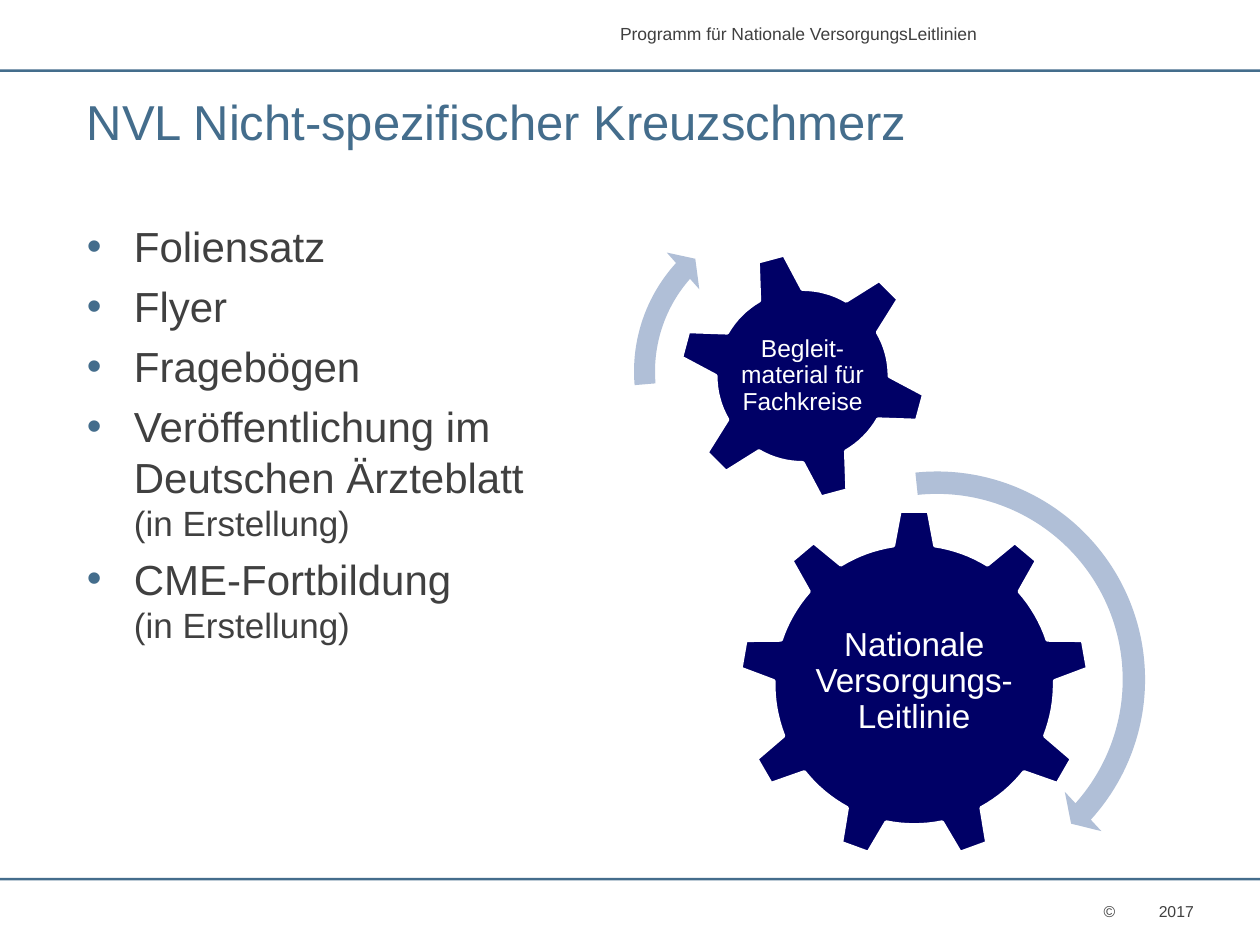
import math
import pptx
import pptx.util
import pptx.dml.color
import pptx.enum.shapes
import pptx.enum.text
import pptx.oxml
import pptx.oxml.ns

Cm = pptx.util.Cm
Pt = pptx.util.Pt
RGB = pptx.dml.color.RGBColor
SHAPE = pptx.enum.shapes.MSO_SHAPE
ALIGN = pptx.enum.text.PP_ALIGN
ANCHOR = pptx.enum.text.MSO_ANCHOR
SPACE = pptx.oxml.ns.nsdecls("a")

STEEL = RGB(0x44, 0x6D, 0x8C)
GREY = RGB(0x40, 0x40, 0x40)
NAVY = RGB(0x00, 0x00, 0x66)
MIST = RGB(0xB0, 0xBF, 0xD7)
WHITE = RGB(0xFF, 0xFF, 0xFF)


class Deck:
    font = "Arial"

    def __init__(self, wide, high):
        self.show = pptx.Presentation()
        self.show.slide_width, self.show.slide_height = Cm(wide), Cm(high)
        self.slide = self.show.slides.add_slide(self.show.slide_layouts[6])

    def words(self, par, text, size, color):
        run = par.add_run()
        run.text = text
        for key, value in {"name": self.font, "size": Pt(size)}.items():
            setattr(run.font, key, value)
        run.font.color.rgb = color

    def frame(self, left, top, wide, high, wrap=True):
        box = self.slide.shapes.add_textbox(Cm(left), Cm(top), Cm(wide), Cm(high))
        box.text_frame.word_wrap = wrap
        return box.text_frame

    def label(self, place, text, size, color, wrap=True, inset=0.25, tab=None):
        frame = self.frame(*place, wrap)
        frame.margin_left = Cm(inset)
        par = frame.paragraphs[0]
        if tab:
            par._p.get_or_add_pPr().append(pptx.oxml.parse_xml(
                f'<a:tabLst {SPACE}><a:tab pos="{Cm(tab)}" algn="l"/></a:tabLst>'))
        self.words(par, text, size, color)

    def bullets(self, place, items, size, small):
        frame = self.frame(*place)
        for num, (lines, note) in enumerate(items):
            par = frame.add_paragraph() if num else frame.paragraphs[0]
            props = par._p.get_or_add_pPr()
            props.set("marL", str(Cm(0.95)))
            props.set("indent", str(Cm(-0.95)))
            for part in (f'<a:buClr {SPACE}><a:srgbClr val="{STEEL}"/></a:buClr>',
                         f'<a:buFont {SPACE} typeface="{self.font}"/>',
                         f'<a:buChar {SPACE} char="•"/>'):
                props.append(pptx.oxml.parse_xml(part))
            if num:
                par.space_before = Pt(size * 0.23)
            for row, line in enumerate(lines):
                if row:
                    par.add_line_break()
                self.words(par, line, size, GREY)
            if note:
                par.add_line_break()
                self.words(par, note, small, GREY)

    def shape(self, kind, place, color, adjust=()):
        item = self.slide.shapes.add_shape(kind, *map(Cm, place))
        item.shadow.inherit = False
        item.fill.solid()
        item.fill.fore_color.rgb = color
        item.line.fill.background()
        for num, value in enumerate(adjust):
            item.adjustments[num] = value

    def gear(self, mid, teeth, turn, body, tip, base, edge, text, size, inset):
        def spot(radius, angle):
            turned = math.radians(angle)
            return (Cm(mid[0] + radius * math.sin(turned)),
                    Cm(mid[1] - radius * math.cos(turned)))

        step = 360 / teeth
        gap = step - 2 * base
        points = []
        for num in range(teeth):
            axis = turn + num * step
            points += [spot(body, axis - base), spot(tip, axis - edge),
                       spot(tip, axis + edge)]
            points += [spot(body, axis + base + gap * part / 8) for part in range(8)]
        draft = self.slide.shapes.build_freeform(*points[0])
        draft.add_line_segments(points[1:], close=True)
        item = draft.convert_to_shape()
        item.shadow.inherit = False
        item.fill.solid()
        item.fill.fore_color.rgb = NAVY
        item.line.color.rgb = WHITE
        item.line.width = Pt(2)
        form = {"word_wrap": True, "vertical_anchor": ANCHOR.MIDDLE,
                "margin_left": Cm(inset), "margin_right": Cm(inset),
                "margin_top": Cm(inset), "margin_bottom": Cm(inset)}
        for key, value in form.items():
            setattr(item.text_frame, key, value)
        par = item.text_frame.paragraphs[0]
        par.alignment = ALIGN.CENTER
        par.line_spacing = 0.9
        self.words(par, text, size, WHITE)


def main():
    deck = Deck(25.4, 19.05)
    deck.label((12.5, 0.33, 11, 1), "Programm für Nationale VersorgungsLeitlinien",
               10, GREY, wrap=False, inset=0)
    deck.label((22, 18.06, 3.3, 0.64), "©\t2017", 9, GREY, tab=1.11)
    for top in (1.4, 17.7):
        deck.shape(SHAPE.RECTANGLE, (0, top, 25.4, 0.05), STEEL)
    deck.label((1.5, 1.73, 23.9, 1.2), "NVL Nicht-spezifischer Kreuzschmerz", 28, STEEL)
    deck.gear((18.43, 13.8), 9, 0, 2.83, 3.51, 8.5, 4.7,
              "Nationale Versorgungs- Leitlinie", 19, 1.47)
    deck.gear((16.18, 7.58), 6, 45, 1.75, 2.47, 14.8, 6.3,
              "Begleit-material für Fachkreise", 14, 1.09)
    deck.shape(SHAPE.CIRCULAR_ARROW, (14.38, 9.19, 9.02, 9.02), MIST,
               (0.05, 2.99, 25.25, 158.42, 0.06))
    deck.shape(SHAPE.CIRCULAR_ARROW, (12.5, 3.96, 7.06, 7.06), MIST,
               (0.06, 3.94, 133.14, 105.08, 0.07))
    note = "(in Erstellung)"
    items = [(["Foliensatz"], None), (["Flyer"], None), (["Fragebögen"], None),
             (["Veröffentlichung im", "Deutschen Ärzteblatt"], note),
             (["CME-Fortbildung"], note)]
    deck.bullets((1.5, 4.32, 22.6, 14.2), items, 24, 20)
    deck.show.save("out.pptx")


if __name__ == "__main__":
    main()
